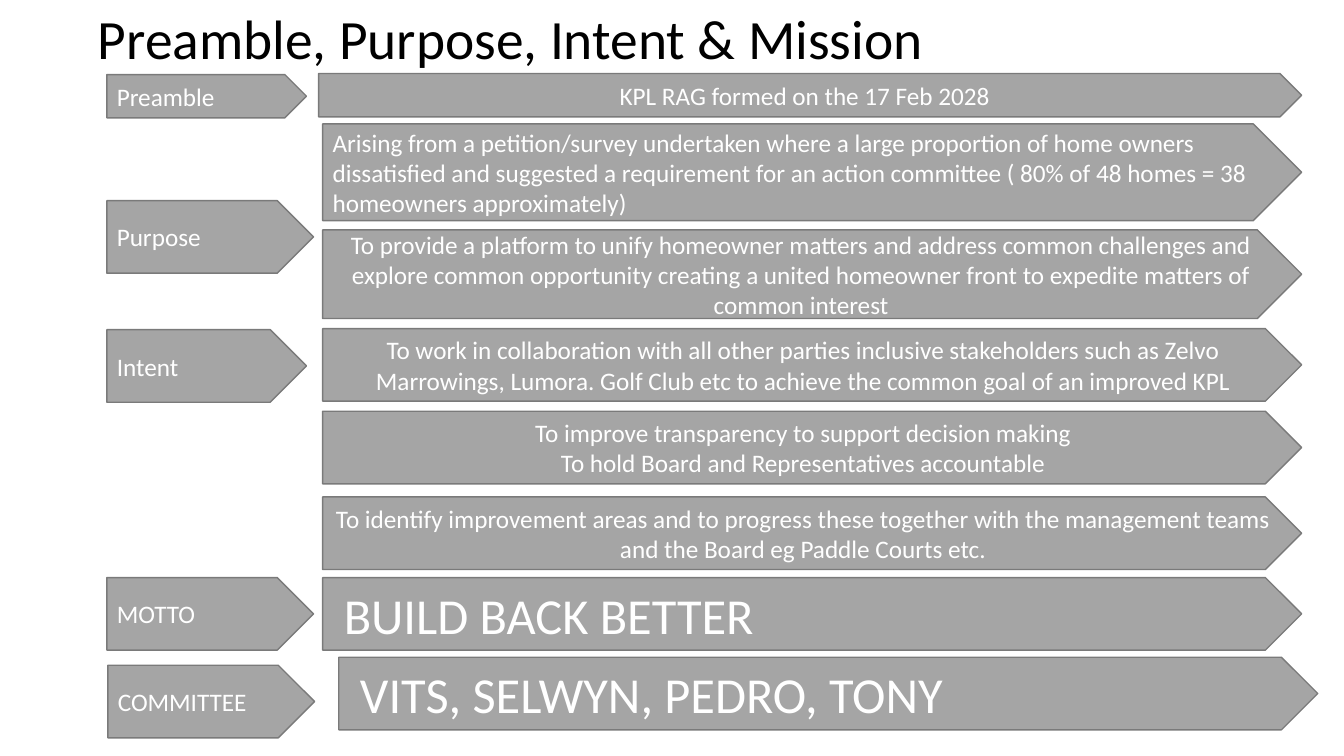
from dataclasses import dataclass

from pptx import Presentation
from pptx import util as u
from pptx.dml.color import RGBColor
from pptx.enum import shapes, text


@dataclass(frozen=True)
class Theme:
    font: str = "Calibri"
    title_color: str = "000000"
    text_color: str = "FFFFFF"
    fill: str = "A5A5A5"
    outline: str = "7A7A7A"
    title_size: float = 39.6
    body_size: float = 18
    banner_size: float = 36
    outline_width: float = 1


class SlideBuilder:
    """Places styled elements on a grid of tenth-inch columns and rows."""

    CELL = u.Inches(0.1)

    def __init__(self, slide, theme):
        self.slide = slide
        self.theme = theme

    def box(self, column, row, columns, rows):
        return [round(cells * self.CELL) for cells in (column, row, columns, rows)]

    def add_run(self, paragraph, words, size, color):
        run = paragraph.add_run()
        run.text = words
        run.font.name = self.theme.font
        run.font.size = u.Pt(size)
        run.font.color.rgb = RGBColor.from_string(color)

    def title(self, words, *cells):
        shape = self.slide.shapes.title
        shape.left, shape.top, shape.width, shape.height = self.box(*cells)
        frame = shape.text_frame
        frame.auto_size = text.MSO_AUTO_SIZE.NONE
        frame.vertical_anchor = text.MSO_ANCHOR.MIDDLE
        paragraph = frame.paragraphs[0]
        paragraph.alignment = text.PP_ALIGN.LEFT
        paragraph.line_spacing = 0.9
        self.add_run(paragraph, words, self.theme.title_size, self.theme.title_color)

    def arrow(self, lines, *cells, size=None, centered=False, inset=0.1):
        shape = self.slide.shapes.add_shape(
            shapes.MSO_SHAPE.PENTAGON, *self.box(*cells))
        shape.shadow.inherit = False
        shape.fill.solid()
        shape.fill.fore_color.rgb = RGBColor.from_string(self.theme.fill)
        shape.line.color.rgb = RGBColor.from_string(self.theme.outline)
        shape.line.width = u.Pt(self.theme.outline_width)
        frame = shape.text_frame
        frame.word_wrap = True
        frame.vertical_anchor = text.MSO_ANCHOR.MIDDLE
        frame.margin_left = u.Inches(inset)
        for index, words in enumerate(lines):
            paragraph = frame.add_paragraph() if index else frame.paragraphs[0]
            paragraph.alignment = (
                text.PP_ALIGN.CENTER if centered else text.PP_ALIGN.LEFT)
            self.add_run(paragraph, words, size or self.theme.body_size,
                         self.theme.text_color)


# Labels: words, column, row, columns, rows
LABELS = [
    ("Preamble", 10.6, 7.4, 19.8, 4.3),
    ("Purpose", 10.6, 19.9, 20.5, 7.2),
    ("Intent", 10.6, 32.7, 19.8, 7.2),
    ("MOTTO", 10.6, 57.3, 20.5, 7.2),
    ("COMMITTEE", 10.7, 66, 20.5, 7.2),
]

# Statements: lines, column, row, columns, rows, centered
STATEMENTS = [
    (["KPL RAG formed on the 17 Feb 2028"], 31.6, 7.3, 97.5, 4.3, True),
    (["Arising from a petition/survey undertaken where a large proportion of "
      "home owners dissatisfied and suggested a requirement for an action "
      "committee ( 80% of 48 homes = 38 homeowners approximately)"],
     32, 12.3, 97.1, 9.6, False),
    (["To provide a platform to unify homeowner matters and address common "
      "challenges and explore common opportunity creating a united homeowner "
      "front to expedite matters of common interest"],
     32, 22.8, 97.1, 8.8, True),
    (["To work in collaboration with all other parties inclusive stakeholders "
      "such as Zelvo Marrowings, Lumora. Golf Club etc to achieve the common "
      "goal of an improved KPL"], 32, 32.6, 97.1, 7.2, True),
    (["To improve transparency to support decision making",
      "To hold Board and Representatives accountable"],
     32, 40.8, 97.1, 7.2, True),
    (["To identify improvement areas and to progress these together with the "
      "management teams and the Board eg Paddle Courts etc."],
     32, 49.3, 97.1, 7.2, True),
]

# Banners: words, column, row, columns, rows
BANNERS = [
    ("BUILD BACK BETTER", 32, 57.3, 97.1, 7.2),
    ("VITS, SELWYN, PEDRO, TONY", 33.6, 65.2, 97.1, 7.2),
]


def main():
    presentation = Presentation()
    presentation.slide_width = u.Inches(13.33)
    presentation.slide_height = u.Inches(7.5)
    slide = presentation.slides.add_slide(presentation.slide_layouts[5])
    theme = Theme()
    builder = SlideBuilder(slide, theme)

    builder.title("Preamble, Purpose, Intent & Mission", 8.7, 1.1, 115, 6.1)
    for words, *cells in LABELS:
        builder.arrow([words], *cells)
    for lines, *cells, centered in STATEMENTS:
        builder.arrow(lines, *cells, centered=centered)
    for words, *cells in BANNERS:
        builder.arrow([words], *cells, size=theme.banner_size, inset=0.21)

    presentation.save("out.pptx")


if __name__ == "__main__":
    main()
